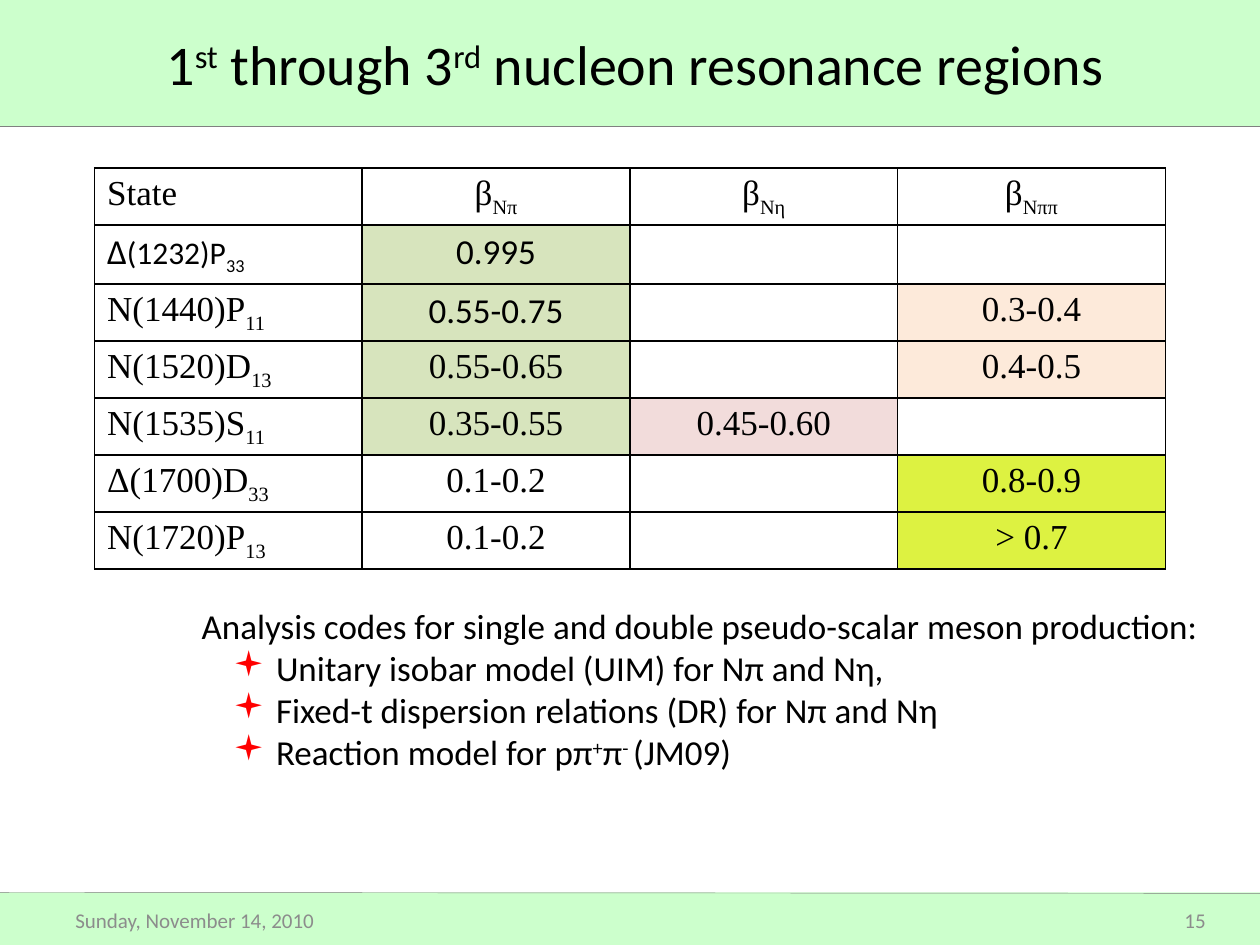
from dataclasses import dataclass

from lxml.etree import SubElement
from pptx import Presentation
from pptx.dml.color import RGBColor
from pptx.enum.shapes import MSO_CONNECTOR, MSO_SHAPE
from pptx.enum.text import MSO_ANCHOR, PP_ALIGN
from pptx.oxml.ns import qn
from pptx.util import Pt


@dataclass(frozen=True)
class Theme:
    sans: str = "Calibri"
    serif: str = "Times New Roman"
    black: str = "000000"
    white: str = "FFFFFF"
    band: str = "CCFFCC"
    rule: str = "808080"
    footer: str = "8C8C8C"
    bullet: str = "FF0000"
    green: str = "D7E4BD"
    peach: str = "FDEADA"
    pink: str = "F2DCDB"
    lime: str = "DDF241"
    title_size: float = 32
    body_size: float = 20
    small_size: float = 18
    footer_size: float = 12


T = Theme()
W, H = 720, 540
SUP, SUB = 30, -25


def color(value):
    return RGBColor.from_string(value)


def place(s, x, y, w, h):
    s.left, s.top, s.width, s.height = Pt(x), Pt(y), Pt(w), Pt(h)


def write(p, *parts, size=T.body_size, font=T.sans, fill=T.black, align=PP_ALIGN.LEFT):
    p.alignment = align
    for part in parts:
        text, base = part if isinstance(part, tuple) else (part, 0)
        r = p.add_run()
        r.text = text
        r.font.size, r.font.name = Pt(size), font
        r.font.color.rgb = color(fill)
        if base:
            r.font._element.set("baseline", str(base * 1000))


def add_band(s_tree, position, y, h):
    s = s_tree.add_shape(MSO_SHAPE.RECTANGLE, 0, Pt(y), Pt(W), Pt(h))
    s.shadow.inherit = False
    s.fill.solid()
    s.fill.fore_color.rgb = color(T.band)
    s.line.fill.background()
    s_tree._spTree.insert(position, s._element)


def add_rule(s_tree, position, y1, y2):
    c = s_tree.add_connector(MSO_CONNECTOR.STRAIGHT, 0, Pt(y1), Pt(W), Pt(y2))
    c.line.color.rgb = color(T.rule)
    c.line.width = Pt(0.25)
    SubElement(c._element.spPr, qn("a:effectLst"))
    s_tree._spTree.insert(position, c._element)


def add_title(slide):
    s = slide.shapes.title
    place(s, 72, 0, 582, 72)
    tf = s.text_frame
    tf.vertical_anchor = MSO_ANCHOR.MIDDLE
    write(tf.paragraphs[0], "1", ("st", SUP), " through 3", ("rd", SUP),
          " nucleon resonance regions", size=T.title_size, align=PP_ALIGN.CENTER)


def set_bullet(p, char=None):
    pPr = p._p.get_or_add_pPr()
    pPr.set("marL", str(Pt(36) if char else 0))
    pPr.set("indent", str(Pt(-18) if char else 0))
    if char:
        clr = SubElement(pPr, qn("a:buClr"))
        SubElement(clr, qn("a:srgbClr"), val=T.bullet)
        SubElement(pPr, qn("a:buFont"), typeface="Wingdings")
        SubElement(pPr, qn("a:buChar"), char=char)
    else:
        SubElement(pPr, qn("a:buNone"))


def add_list(slide, heading, items):
    s = slide.placeholders[1]
    place(s, 108, 342, 588, 104)
    tf = s.text_frame
    tf.word_wrap = False
    for i, parts in enumerate([heading] + items):
        p = tf.add_paragraph() if i else tf.paragraphs[0]
        p.level = 1 if i else 0
        p.space_before = Pt(0)
        set_bullet(p, "▪" if i else None)
        write(p, *parts)


def set_borders(cell):
    tcPr = cell._tc.get_or_add_tcPr()
    for i, side in enumerate(("lnL", "lnR", "lnT", "lnB")):
        ln = tcPr.makeelement(qn(f"a:{side}"), {"w": str(Pt(1))})
        fill = SubElement(ln, qn("a:solidFill"))
        SubElement(fill, qn("a:srgbClr"), val=T.black)
        tcPr.insert(i, ln)


def fill_cell(cell, align, parts=(), fill=T.white, font=T.serif):
    cell.fill.solid()
    cell.fill.fore_color.rgb = color(fill)
    set_borders(cell)
    write(cell.text_frame.paragraphs[0], *parts, font=font, align=align)


def add_table(slide, rows):
    n, m = len(rows), len(rows[0])
    table = slide.shapes.add_table(n, m, Pt(54), Pt(96), Pt(612), Pt(29.2 * n)).table
    table.first_row = table.horz_banding = False
    for i, row in enumerate(rows):
        for j, content in enumerate(row):
            align = PP_ALIGN.CENTER if j else PP_ALIGN.LEFT
            fill_cell(table.cell(i, j), align, *content)
    for r in table.cell(1, 0).text_frame.paragraphs[0].runs[1:]:
        r.font.size = Pt(T.small_size)


def add_footer(slide, x, w, text, align):
    tf = slide.shapes.add_textbox(Pt(x), Pt(511), Pt(w), Pt(29)).text_frame
    tf.word_wrap = True
    tf.vertical_anchor = MSO_ANCHOR.MIDDLE
    write(tf.paragraphs[0], text, size=T.footer_size, fill=T.footer, align=align)


def state(name, wave):
    return ([name, (wave, SUB)],)


def value(text, *style):
    return ([text], *style)


def main():
    prs = Presentation()
    prs.slide_width, prs.slide_height = Pt(W), Pt(H)
    slide = prs.slides.add_slide(prs.slide_layouts[1])

    add_band(slide.shapes, 2, 510, 30)
    add_rule(slide.shapes, 3, 510, 510.5)
    add_band(slide.shapes, 4, 0, 72)
    add_rule(slide.shapes, 5, 72, 72)
    add_title(slide)

    blank = ()
    add_table(slide, [
        [value("State"), state("β", "Nπ"), state("β", "Nη"), state("β", "Nππ")],
        [(["Δ", "(1232)P", ("33", SUB)], T.white, T.sans),
         value("0.995", T.green, T.sans), blank, blank],
        [state("N(1440)P", "11"), value("0.55-0.75", T.green, T.sans), blank,
         value("0.3-0.4", T.peach)],
        [state("N(1520)D", "13"), value("0.55-0.65", T.green), blank,
         value("0.4-0.5", T.peach)],
        [state("N(1535)S", "11"), value("0.35-0.55", T.green),
         value("0.45-0.60", T.pink), blank],
        [state("Δ(1700)D", "33"), value("0.1-0.2"), blank, value("0.8-0.9", T.lime)],
        [state("N(1720)P", "13"), value("0.1-0.2"), blank, value("> 0.7", T.lime)],
    ])

    add_list(slide, ["Analysis codes for single and double pseudo-scalar meson production:"], [
        [" Unitary isobar model (UIM) for Nπ and Nη,"],
        [" Fixed-t dispersion relations (DR) for Nπ and Nη"],
        [" Reaction model for pπ", ("+", SUP), "π", ("- ", SUP), "(JM09)"],
    ])
    add_footer(slide, 528, 168, "15", PP_ALIGN.RIGHT)
    add_footer(slide, 36, 210, "Sunday, November 14, 2010", PP_ALIGN.LEFT)
    prs.save("out.pptx")


if __name__ == "__main__":
    main()
